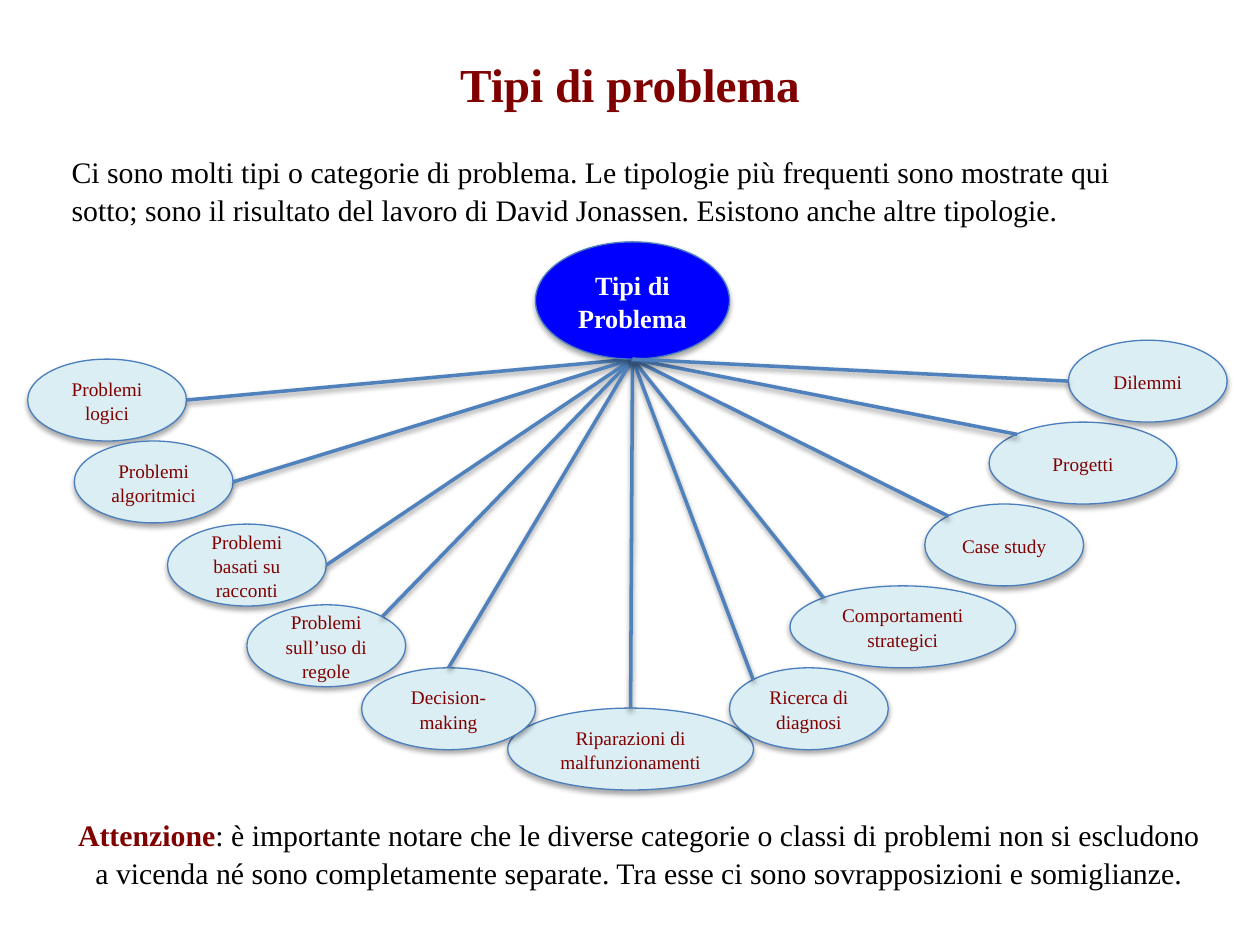
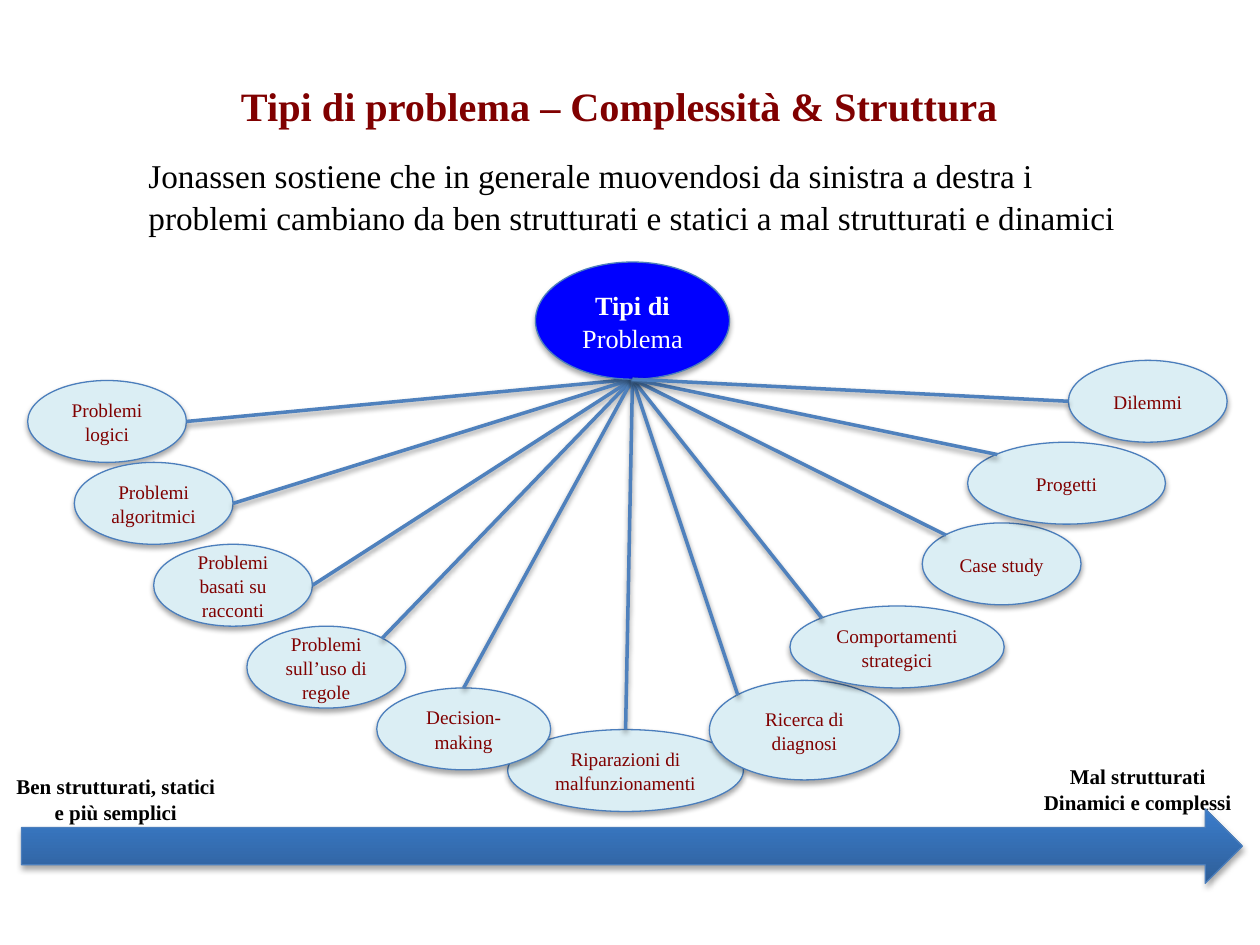
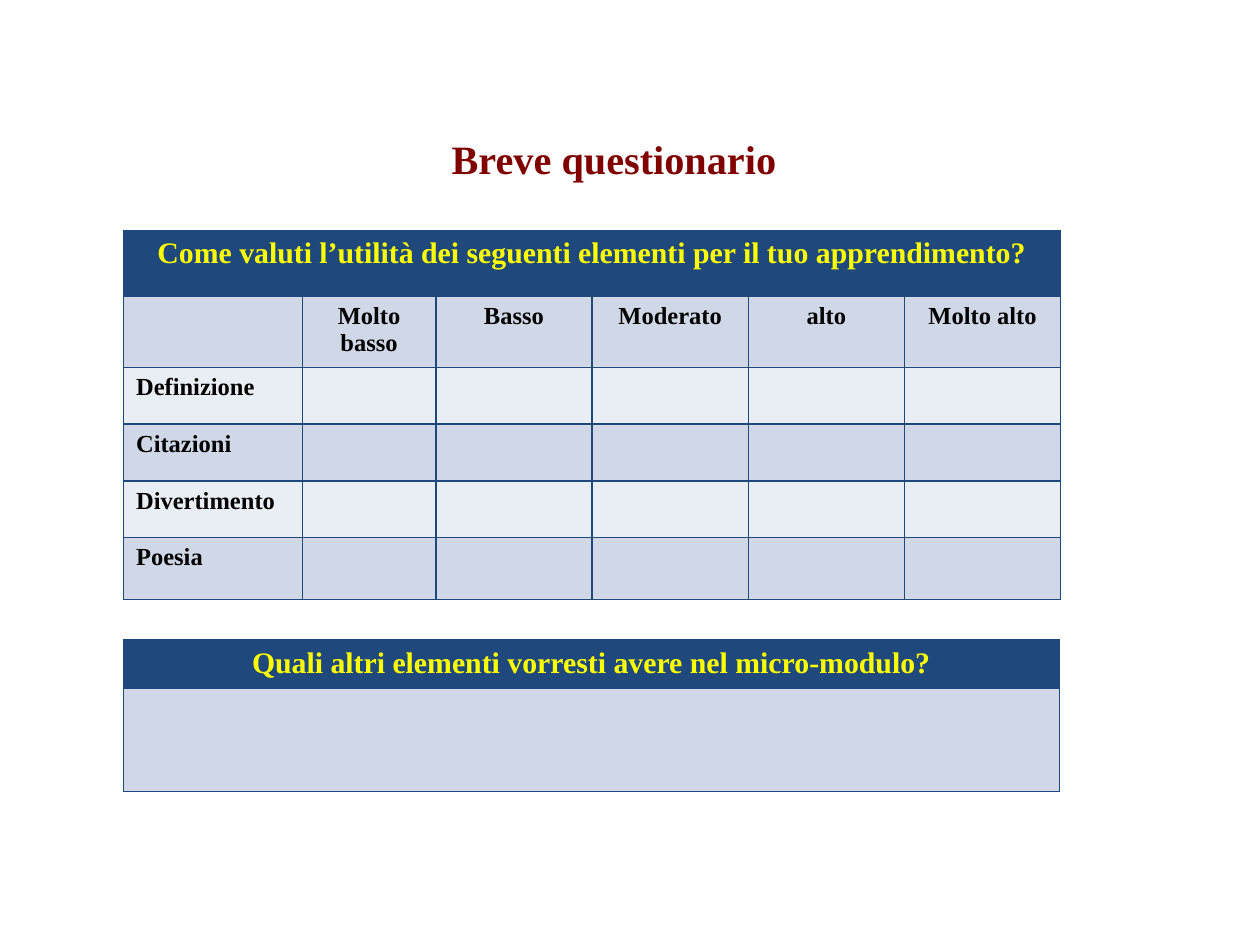
from lxml import etree
from pptx import Presentation
from pptx.dml.color import RGBColor
from pptx.enum.shapes import MSO_CONNECTOR, MSO_SHAPE
from pptx.enum.text import MSO_ANCHOR, PP_ALIGN
from pptx.oxml.ns import qn
from pptx.util import Inches, Pt

ELLIPSE = MSO_SHAPE.OVAL
RIGHT_ARROW = MSO_SHAPE.RIGHT_ARROW
STRAIGHT = MSO_CONNECTOR.STRAIGHT
CENTER = PP_ALIGN.CENTER
LEFT = PP_ALIGN.LEFT
MIDDLE = MSO_ANCHOR.MIDDLE
TOP = MSO_ANCHOR.TOP

FONT = "Times New Roman"
COLORS = {
    "maroon": "800000",
    "black": "000000",
    "white": "FFFFFF",
    "yellow": "FFFF00",
    "hub": "0000FF",
    "leaf": "DBEEF4",
    "outline": "4B7EBC",
    "ray": "4F81BD",
    "arrow_dark": "2F5F99",
    "arrow_light": "3A7CCB",
    "navy": "1F497D",
    "band_dark": "D0D8E8",
    "band_light": "E9EDF4",
}
FORMATS = {
    "title": {"size": 27, "bold": True, "color": "maroon"},
    "subtitle": {"size": 23, "bold": True, "color": "maroon"},
    "body": {"size": 17, "bold": False, "color": "black"},
    "lead": {"size": 19, "bold": False, "color": "black"},
    "warning": {"size": 17, "bold": True, "color": "maroon"},
    "leaf": {"size": 11, "bold": False, "color": "maroon"},
    "hub": {"size": 15, "bold": True, "color": "white"},
    "hub_plain": {"size": 15, "bold": False, "color": "white"},
    "label": {"size": 12, "bold": True, "color": "black"},
    "heading": {"size": 17, "bold": True, "color": "yellow"},
    "cell": {"size": 14, "bold": True, "color": "black"},
}

ANCHORS = {
    "right": (1, 0.5),
    "top_right": (0.85, 0.15),
    "top": (0.5, 0),
    "top_left": (0.15, 0.15),
    "left": (0, 0.5),
}
PROBLEMS = [
    ("Problemi logici", "right"),
    ("Problemi algoritmici", "right"),
    ("Riparazioni di malfunzionamenti", "top"),
    ("Problemi basati su racconti", "right"),
    ("Problemi sull’uso di regole", "top_right"),
    ("Decision-making", "top"),
    ("Ricerca di diagnosi", "top_left"),
    ("Comportamenti strategici", "top_left"),
    ("Case study", "top_left"),
    ("Progetti", "top_left"),
    ("Dilemmi", "left"),
]
LEAF_WIDTH, LEAF_HEIGHT = 1.26, 0.65
HUB_LEFT, HUB_WIDTH, HUB_HEIGHT = 4.25, 1.54, 0.93
TYPES_LAYOUT = [
    (0.22, 2.85), (0.59, 3.5), (4.03, 5.62, 1.95), (1.33, 4.16),
    (1.96, 4.8), (2.87, 5.3, 1.38), (5.79, 5.3), (6.27, 4.65, 1.79),
    (7.34, 4), (7.85, 3.35, 1.49), (8.48, 2.7),
]
STRUCTURE_LAYOUT = [
    (0.22, 3.02), (0.59, 3.67), (4.03, 5.79, 1.87), (1.22, 4.32),
    (1.96, 4.97), (2.99, 5.46, 1.38), (5.63, 5.4, 1.51, 0.79),
    (6.27, 4.81, 1.7), (7.32, 4.15), (7.68, 3.51, 1.57), (8.48, 2.86),
]


class Deck:
    def __init__(self):
        self.deck = Presentation()
        self.deck.slide_width = Inches(10)
        self.deck.slide_height = Inches(7.5)
        self.page = None

    def color(self, name):
        return RGBColor.from_string(COLORS[name])

    def new_page(self):
        self.page = self.deck.slides.add_slide(self.deck.slide_layouts[6])

    def set_text(self, frame, paragraphs, align, line_spacing=1.05):
        for index, spans in enumerate(paragraphs):
            para = frame.add_paragraph() if index else frame.paragraphs[0]
            para.alignment = align
            para.line_spacing = line_spacing
            for text, style in spans:
                span = para.add_run()
                span.text = text
                values = FORMATS[style]
                settings = {"name": FONT, "size": Pt(values["size"]), "bold": values["bold"]}
                for key, value in settings.items():
                    setattr(span.font, key, value)
                span.font.color.rgb = self.color(values["color"])

    def text(self, area, paragraphs, align=CENTER):
        box = self.page.shapes.add_textbox(*map(Inches, area))
        box.text_frame.word_wrap = True
        self.set_text(box.text_frame, paragraphs, align)

    def shadow(self, shape, distance, opacity):
        properties = shape.element.spPr
        for existing in properties.findall(qn("a:effectLst")):
            properties.remove(existing)
        effects = etree.SubElement(properties, qn("a:effectLst"))
        outer = etree.SubElement(
            effects, qn("a:outerShdw"), blurRad=str(Pt(3.1)),
            dist=str(Pt(distance)), dir="5400000", rotWithShape="0")
        black = etree.SubElement(outer, qn("a:srgbClr"), val=COLORS["black"])
        etree.SubElement(black, qn("a:alpha"), val=str(opacity * 1000))

    def shape(self, kind, area):
        shape = self.page.shapes.add_shape(kind, *map(Inches, area))
        shape.line.color.rgb = self.color("outline")
        shape.line.width = Pt(0.75)
        return shape

    def ellipse(self, area, fill, spans):
        shape = self.shape(ELLIPSE, area)
        shape.fill.solid()
        shape.fill.fore_color.rgb = self.color(fill)
        self.shadow(shape, 1.8, 35)
        shape.text_frame.word_wrap = True
        shape.text_frame.vertical_anchor = MIDDLE
        self.set_text(shape.text_frame, [spans], CENTER)

    def arrow(self, area):
        shape = self.shape(RIGHT_ARROW, area)
        shape.fill.gradient()
        shape.fill.gradient_angle = 90
        for stop, position, name in zip(
                shape.fill.gradient_stops, (0, 1), ("arrow_dark", "arrow_light")):
            stop.position = position
            stop.color.rgb = self.color(name)
        self.shadow(shape, 1.8, 35)

    def ray(self, start, end):
        line = self.page.shapes.add_connector(STRAIGHT, *map(Inches, start + end))
        line.line.color.rgb = self.color("ray")
        line.line.width = Pt(2)
        self.shadow(line, 1.6, 38)

    def diagram(self, layout, hub_top, hub_spans, intro):
        origin = (HUB_LEFT + HUB_WIDTH / 2, hub_top + HUB_HEIGHT)
        left_ends, right_ends = [], []
        for (name, anchor), place in zip(PROBLEMS, layout):
            left, top, width, height = place + (LEAF_WIDTH, LEAF_HEIGHT)[len(place) - 2:]
            self.ellipse((left, top, width, height), "leaf", [(name, "leaf")])
            across, down = ANCHORS[anchor]
            end = (left + width * across, top + height * down)
            ends = left_ends if end[0] < HUB_LEFT else right_ends
            ends.append(end)
        self.text(*intro, align=LEFT)
        for end in left_ends:
            self.ray(origin, end)
        self.ellipse((HUB_LEFT, hub_top, HUB_WIDTH, HUB_HEIGHT), "hub", hub_spans)
        for end in right_ends:
            self.ray(origin, end)

    def cell(self, cell, text, style, fill, align):
        cell.fill.solid()
        cell.fill.fore_color.rgb = self.color(fill)
        cell.vertical_anchor = TOP
        if text:
            self.set_text(cell.text_frame, [[(text, style)]], align, 1.0)
        properties = cell._tc.get_or_add_tcPr()
        for index, side in enumerate(("lnL", "lnR", "lnT", "lnB")):
            border = etree.Element(qn(f"a:{side}"), w=str(Pt(1)))
            solid = etree.SubElement(border, qn("a:solidFill"))
            etree.SubElement(solid, qn("a:srgbClr"), val=COLORS["navy"])
            properties.insert(index, border)

    def table(self, left, top, widths, heights, heading, rows):
        area = (left, top, sum(widths), sum(heights))
        frame = self.page.shapes.add_table(
            len(heights), len(widths), *map(Inches, area))
        table = frame.table
        for column, width in zip(table.columns, widths):
            column.width = Inches(width)
        for row, height in zip(table.rows, heights):
            row.height = Inches(height)
        for index in range(len(widths)):
            self.cell(table.cell(0, index), "" if index else heading,
                      "heading", "navy", CENTER)
        if len(widths) > 1:
            table.cell(0, 0).merge(table.cell(0, len(widths) - 1))
        for number, texts in enumerate(rows, 1):
            fill = "band_dark" if number % 2 else "band_light"
            for index, text in enumerate(texts):
                self.cell(table.cell(number, index), text, "cell", fill,
                          CENTER if index else LEFT)


def types_page(deck):
    deck.new_page()
    deck.text((1.5, 0.37, 7, 0.59), [[("Tipi di problema", "title")]])
    intro = (
        "Ci sono molti tipi o categorie di problema. Le tipologie più frequenti "
        "sono mostrate qui sotto; sono il risultato del lavoro di David Jonassen. "
        "Esistono anche altre tipologie.")
    deck.diagram(TYPES_LAYOUT, 1.92, [("Tipi di Problema", "hub")],
                 ((0.47, 1.16, 9.03, 0.67), [[(intro, "body")]]))
    note = (
        ": è importante notare che le diverse categorie o classi di problemi non "
        "si escludono a vicenda né sono completamente separate. Tra esse ci sono "
        "sovrapposizioni e somiglianze.")
    deck.text((0.5, 6.42, 9.15, 0.67), [[("Attenzione", "warning"), (note, "body")]])


def structure_page(deck):
    deck.new_page()
    deck.text((1.42, 0.58, 7, 0.58),
              [[("Tipi di problema – Complessità & Struttura", "subtitle")]])
    intro = (
        "Jonassen sostiene che in generale muovendosi da sinistra a destra i "
        "problemi cambiano da ben strutturati e statici a mal strutturati e dinamici")
    deck.diagram(STRUCTURE_LAYOUT, 2.08, [("Tipi di ", "hub"), ("Problema", "hub_plain")],
                 ((1.08, 1.17, 8.08, 0.74), [[(intro, "lead")]]))
    extremes = [
        ((0, 6.08, 1.84, 0.5), ("Ben strutturati, statici", "e più semplici")),
        ((8.06, 6, 1.94, 0.5), ("Mal strutturati", "Dinamici e complessi")),
    ]
    for area, lines in extremes:
        deck.text(area, [[(line, "label")] for line in lines])
    deck.arrow((0.17, 6.42, 9.69, 0.59))


def survey_page(deck):
    deck.new_page()
    deck.text((2.25, 1, 5.25, 0.63), [[("Breve questionario", "subtitle")]])
    ratings = ["", "Molto basso", "Basso", "Moderato", "alto", "Molto alto"]
    items = ["Definizione", "Citazioni", "Divertimento", "Poesia"]
    rows = [ratings] + [[item] + [""] * 5 for item in items]
    deck.table(0.98, 1.83, [1.42, 1.06] + [1.24] * 4,
               [0.52, 0.53] + [0.45] * 3 + [0.49],
               "Come valuti l’utilità dei seguenti elementi per il tuo apprendimento?",
               rows)
    deck.table(0.98, 5.08, [7.43], [0.38, 0.82],
               "Quali altri elementi vorresti avere nel micro-modulo?", [[""]])


def main():
    deck = Deck()
    types_page(deck)
    structure_page(deck)
    survey_page(deck)
    deck.deck.save("out.pptx")


if __name__ == "__main__":
    main()
